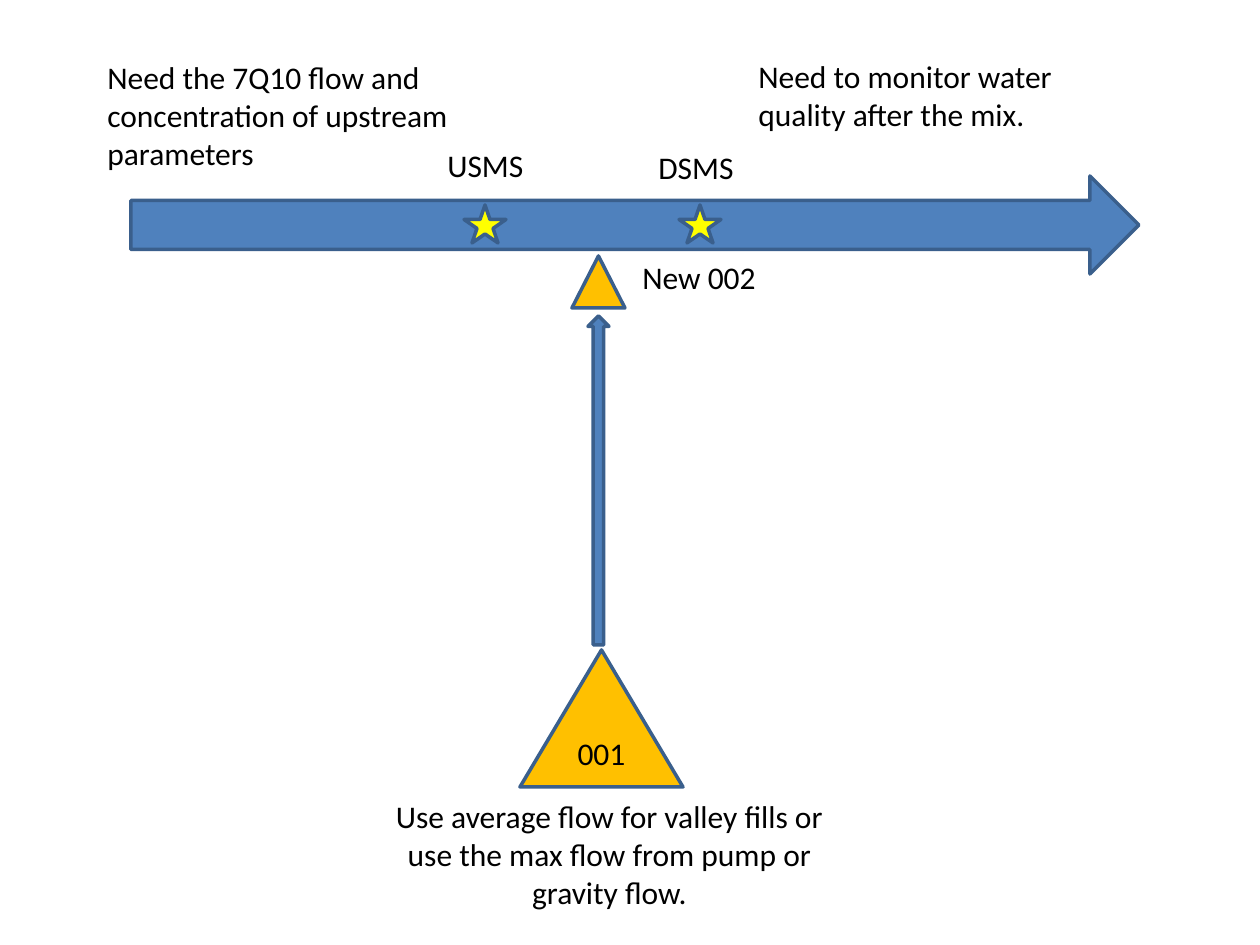
from pptx import Presentation
from pptx.dml.color import RGBColor
from pptx.enum.shapes import MSO_SHAPE
from pptx.enum.text import MSO_ANCHOR, MSO_AUTO_SIZE, PP_ALIGN
from pptx.util import Emu, Pt

RIGHT, UP = MSO_SHAPE.RIGHT_ARROW, MSO_SHAPE.UP_ARROW
STAR, PEAK = MSO_SHAPE.STAR_5_POINT, MSO_SHAPE.ISOSCELES_TRIANGLE
LEFT, MID = PP_ALIGN.LEFT, PP_ALIGN.CENTER
GROW, CENTER = MSO_AUTO_SIZE.SHAPE_TO_FIT_TEXT, MSO_ANCHOR.MIDDLE

BLUE = RGBColor(0x4F, 0x81, 0xBD)
EDGE = RGBColor(0x3A, 0x5F, 0x8C)
YELLOW = RGBColor(0xFF, 0xFF, 0x00)
AMBER = RGBColor(0xFF, 0xC0, 0x00)
BLACK = RGBColor(0x00, 0x00, 0x00)

SCALE = 914400 / 126  # EMU per px

deck = Presentation()
deck.slide_width, deck.slide_height = Emu(9144000), Emu(6858000)
slide = deck.slides.add_slide(deck.slide_layouts[6])


def add_form(kind, box, color):
    form = slide.shapes.add_shape(kind, *[Emu(round(n * SCALE)) for n in box])
    form.shadow.inherit = False
    form.fill.solid()
    form.fill.fore_color.rgb = color
    form.line.color.rgb = EDGE
    form.line.width = Pt(2)
    return form


def add_text(text, box=None, form=None, align=LEFT, wrap=True):
    """Write text into form, or into a new text box; each line is a paragraph."""
    if form is None:
        form = slide.shapes.add_textbox(*[Emu(round(n * SCALE)) for n in box])
        form.text_frame.auto_size = GROW
    else:
        form.text_frame.vertical_anchor = CENTER
    frame = form.text_frame
    frame.word_wrap = wrap
    frame.text = text
    for para in frame.paragraphs:
        para.alignment = align
        para.font.name = "Calibri"
        para.font.size = Pt(18)
        para.font.color.rgb = BLACK


# Stream with its two monitoring stations
add_form(RIGHT, (131, 176, 1008, 98), BLUE)
for x in (464, 679):
    add_form(STAR, (x, 205, 42, 38), YELLOW)
add_text("USMS", (435, 140, 116, 50))
add_text("DSMS", (646, 142, 116, 50))

# Old outlet, moved up to the new one
add_form(UP, (588, 316, 21, 329), BLUE)
add_text("001", form=add_form(PEAK, (520, 650, 163, 137), AMBER), align=MID)
add_form(PEAK, (572, 256, 53, 52), AMBER)
add_text("New 002", (630, 252, 140, 50), wrap=False)

# Notes
add_text("Need the 7Q10 flow and\nconcentration of upstream\nparameters",
         (95, 52, 377, 127))
add_text("Need to monitor water\nquality after the mix.", (746, 51, 336, 89))
add_text("Use average flow for valley fills or\nuse the max flow from pump or\n"
         "gravity flow.", (381, 791, 457, 127), align=MID, wrap=False)

deck.save("out.pptx")
